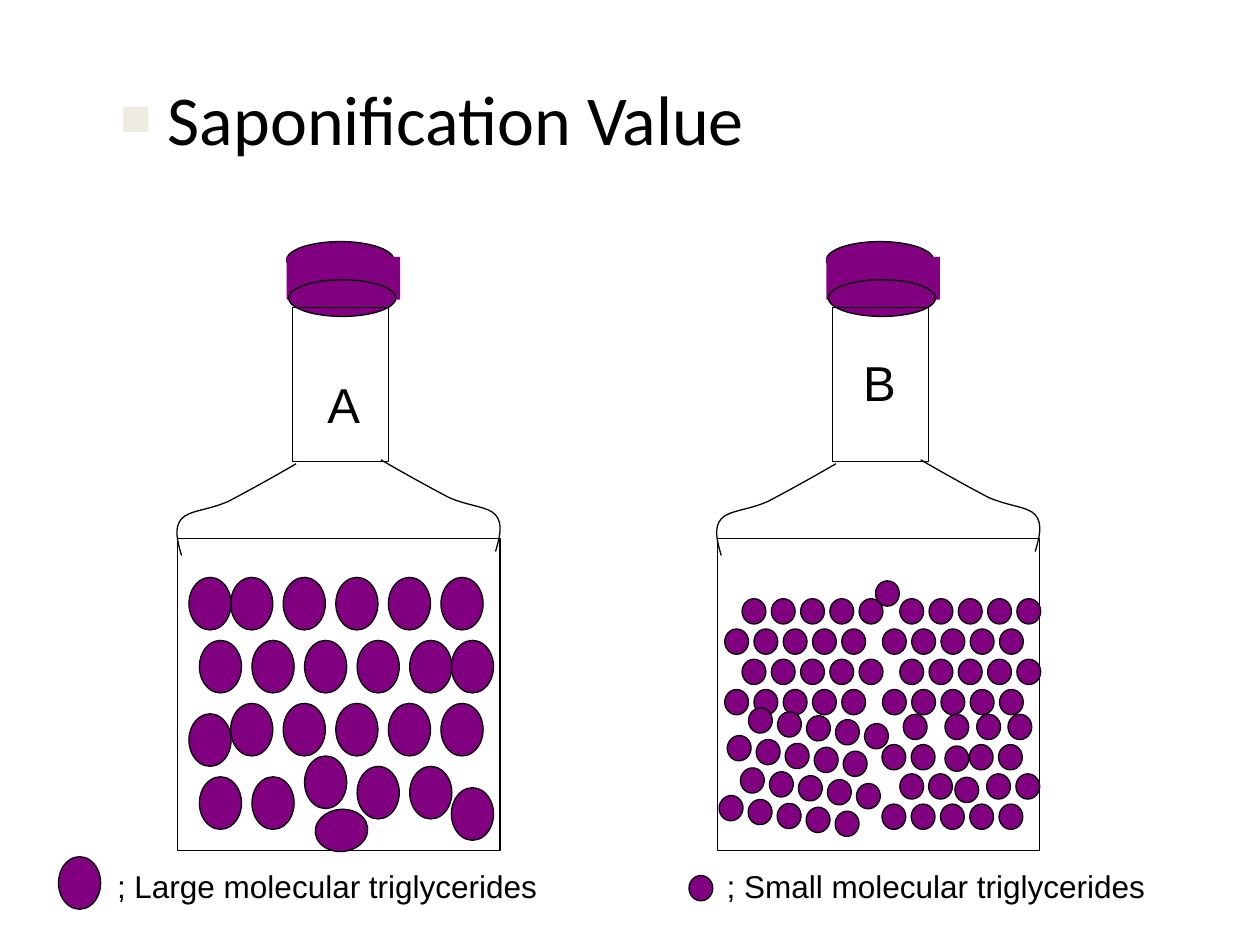
from math import cos, radians, sin

from lxml import etree
from pptx import Presentation
from pptx.dml.color import RGBColor
from pptx.enum.shapes import MSO_SHAPE
from pptx.enum.text import MSO_ANCHOR, MSO_AUTO_SIZE, PP_ALIGN
from pptx.oxml.ns import qn
from pptx.util import Cm, Pt

OVAL = MSO_SHAPE.OVAL
RECT = MSO_SHAPE.RECTANGLE
LEFT = PP_ALIGN.LEFT
TOP = MSO_ANCHOR.TOP
FIXED = MSO_AUTO_SIZE.NONE

PURPLE = RGBColor(0x80, 0x00, 0x80)
BLACK = RGBColor(0, 0, 0)
CREAM = RGBColor(0xEE, 0xEC, 0xE1)

LARGE = (0.85, 1.06)
SMALL = (0.48, 0.51)
PITCH = 1.06
STEP = 0.59
ROW = 0.61
SHIFT = 0.35
GAP = 10.88  # from bottle A to bottle B
TILT = 7.7

# Left shoulder of bottle A: a start, then three points for each curve
CURVE = [
    (5.97, 9.35),
    (5.49, 9.63), (4.98, 9.91), (4.6, 10.11),
    (4.19, 10.29), (3.81, 10.29), (3.66, 10.46),
    (3.5, 10.64), (3.58, 10.92), (3.66, 11.2),
]
MIRROR = 13.65
RISE = 0.08

LOOSE_LARGE = [
    (4.02, 15.66), (5.08, 15.66), (6.14, 15.24), (7.2, 15.45), (8.26, 15.45),
    (9.1, 12.91), (9.1, 15.88), (3.81, 11.64), (3.81, 14.39),
]
LOOSE_SMALL = [
    (18.21, 14.4), (17.65, 11.71), (19.05, 14.4), (19.69, 14.4), (20.32, 14.4),
    (17.78, 15.01), (18.37, 15.01), (19.25, 15.67), (19.54, 15.01),
    (20.13, 15.01), (18.14, 15.6), (18.72, 15.6), (19.05, 15.04),
    (19.89, 15.6), (20.48, 15.6),
]


class Board:
    def __init__(self, slide):
        self.slide = slide
        self.shapes = slide.shapes

    def font(self, para, name, size):
        for run in para.runs:
            run.font.name = name
            run.font.size = Pt(size)
            run.font.color.rgb = BLACK

    def title(self, text, x, y, w, h):
        box = self.shapes.title
        box.left, box.top, box.width, box.height = Cm(x), Cm(y), Cm(w), Cm(h)
        frame = box.text_frame
        frame.text = text
        frame.vertical_anchor = TOP
        frame.auto_size = FIXED
        para = frame.paragraphs[0]
        para.alignment = LEFT
        self.font(para, "Calibri", 40)
        self.bullet(para)

    def bullet(self, para):
        props = para._p.get_or_add_pPr()
        props.set("marL", str(Cm(0.95)))
        props.set("indent", str(-Cm(0.95)))
        color = etree.SubElement(props, qn("a:buClr"))
        etree.SubElement(color, qn("a:srgbClr"), val=str(CREAM))
        etree.SubElement(props, qn("a:buSzPct"), val="75000")
        etree.SubElement(props, qn("a:buFont"), typeface="Arial")
        etree.SubElement(props, qn("a:buChar"), char="■")

    def label(self, text, x, y, w, h, size):
        box = self.shapes.add_textbox(Cm(x), Cm(y), Cm(w), Cm(h))
        frame = box.text_frame
        frame.word_wrap = True
        frame.text = text
        self.font(frame.paragraphs[0], "Arial", size)

    def paint(self, shape, fill, line):
        shape.shadow.inherit = False
        if fill:
            shape.fill.solid()
            shape.fill.fore_color.rgb = fill
        else:
            shape.fill.background()
        if line:
            shape.line.color.rgb = line
            shape.line.width = Pt(0.75)
        else:
            shape.line.fill.background()

    def shape(self, kind, x, y, w, h, fill=PURPLE, line=BLACK, turn=0):
        item = self.shapes.add_shape(kind, Cm(x), Cm(y), Cm(w), Cm(h))
        item.rotation = turn
        self.paint(item, fill, line)

    def drop(self, x, y, size, turn=0):
        self.shape(OVAL, x, y, *size, turn=turn)

    def curve(self, points):
        """Draw a line of cubic curves through every third point."""
        spots = [(Cm(x), Cm(y)) for x, y in points]
        pen = self.shapes.build_freeform(*spots[0])
        pen.add_line_segments(spots[1:], close=False)
        item = pen.convert_to_shape()
        lines = list(item.element.iter(qn("a:lnTo")))
        for i in range(0, len(lines), 3):
            bend = etree.Element(qn("a:cubicBezTo"))
            lines[i].addprevious(bend)
            for part in lines[i:i + 3]:
                bend.append(part[0])
                part.getparent().remove(part)
        self.paint(item, None, BLACK)

    def bottle(self, dx):
        self.shape(OVAL, 5.78 + dx, 4.87, 2.16, 0.74)
        self.shape(RECT, 5.78 + dx, 5.18, 2.29, 0.86, line=None)
        self.shape(OVAL, 5.82 + dx, 5.64, 2.16, 0.74)
        self.shape(RECT, 5.9 + dx, 6.2, 1.94, 3.1, fill=None)
        self.shape(RECT, 3.58 + dx, 10.85, 6.5, 6.3, fill=None)
        self.curve([(x + dx, y) for x, y in CURVE])
        self.curve([(MIRROR - x + dx, y - RISE) for x, y in CURVE])

    def row(self, x, y, step, size):
        for i in range(5):
            self.drop(x + i * step, y, size)

    def block(self, x, y, turn=0):
        """Draw four staggered rows of small drops, turned as a whole."""
        c, s = cos(radians(turn)), sin(radians(turn))
        for j in range(4):
            for i in range(5):
                dx = i * STEP - j % 2 * SHIFT
                dy = j * ROW
                self.drop(x + dx * c - dy * s, y + dx * s + dy * c,
                          SMALL, turn)


def main():
    deck = Presentation()
    deck.slide_width, deck.slide_height = Cm(25.4), Cm(19.05)
    board = Board(deck.slides.add_slide(deck.slide_layouts[5]))
    board.title("Saponification Value", 2.18, 1.4, 21.6, 2)

    board.bottle(GAP)
    board.block(14.96, 12.07)
    board.block(18.14, 12.07)
    board.block(15.09, 14.27, TILT)
    for x, y in LOOSE_SMALL:
        board.drop(x, y, SMALL)
    board.row(17.78, 16.21, STEP, SMALL)

    board.bottle(0)
    for x, y in [(4.65, 11.64), (4.02, 12.91), (4.65, 14.18)]:
        board.row(x, y, PITCH, LARGE)
    for x, y in LOOSE_LARGE:
        board.drop(x, y, LARGE)
    board.drop(6.46, 16.21, LARGE, 264)

    board.label("A", 6.35, 7.42, 1.27, 1.45, 28)
    board.label("B", 17.15, 6.99, 1.27, 1.45, 28)
    board.label("; Large molecular triglycerides", 2.11, 17.35, 9.2, 1.02, 18)
    board.label("; Small molecular triglycerides", 14.4, 17.35, 9.8, 1.02, 18)
    board.drop(1.18, 17.27, LARGE)
    board.drop(13.89, 17.65, SMALL)
    deck.save("out.pptx")


if __name__ == "__main__":
    main()
